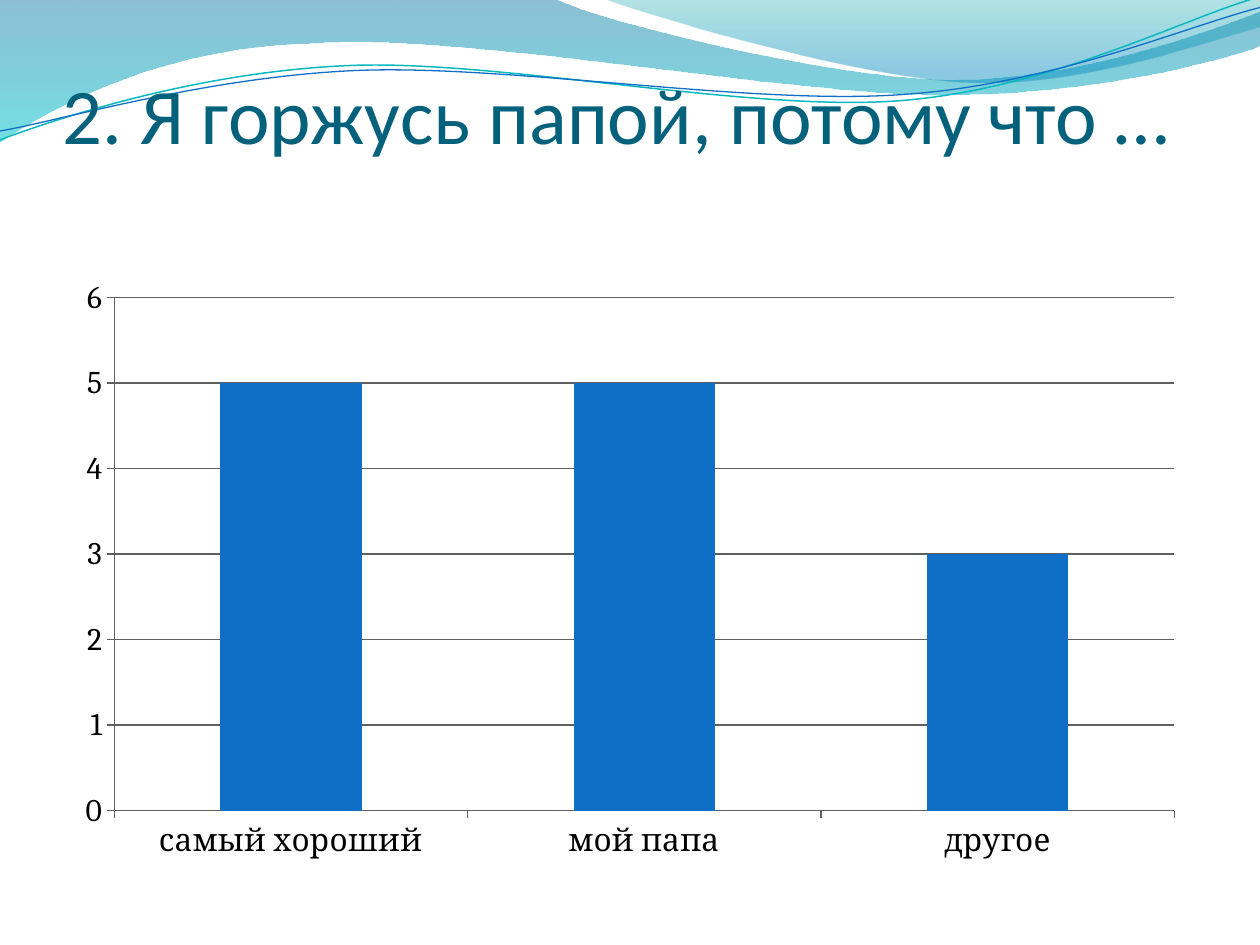
from dataclasses import dataclass
from math import cos, radians, sin
from typing import Optional

from lxml.etree import SubElement
from pptx import Presentation
from pptx.chart.data import CategoryChartData
from pptx.dml.color import RGBColor
from pptx.enum.chart import XL_CHART_TYPE as ChartType, XL_TICK_MARK as TickMark
from pptx.enum.text import MSO_ANCHOR as Anchor
from pptx.oxml.ns import qn
from pptx.util import Inches, Pt

COLORS = {
    "title": "04617B",
    "bar": "0F6FC6",
    "grid": "5F5F5F",
    "text": "000000",
    "deep_blue": "0074A1",
    "cyan": "00C6CF",
    "teal": "00A1A9",
    "sky": "008BBF",
    "teal_line": "0AB8BF",
    "blue_line": "0F6FC6",
}
LINE_TILT = -2.7


@dataclass
class GradientStop:
    position: float
    color: str
    opacity: int


@dataclass
class Wave:
    start: tuple
    segments: list
    gradient: Optional[list] = None
    line_color: str = ""
    line_width: float = 0
    tilt: float = 0
    pivot: tuple = (0, 0)


WAVES = [
    Wave(
        (0, 0),
        [
            (4.4, -0.01),
            (4.76, 0.17, 6.64, 0.63, 7.58, 0.63),
            (8.53, 0.63, 9.58, 0.26, 10, 0.09),
            (10.01, 0.36),
            (9.83, 0.44, 8.7, 0.76, 7.46, 0.75),
            (6.22, 0.75, 3.82, 0.28, 2.57, 0.34),
            (1.29, 0.36, 0.46, 0.83, -0.01, 1.13),
        ],
        gradient=[GradientStop(0, "deep_blue", 45), GradientStop(1, "cyan", 55)],
    ),
    Wave(
        (4.79, -0.01),
        [
            (5.09, 0.11, 6.82, 0.62, 7.69, 0.65),
            (8.56, 0.69, 9.61, 0.32, 10, 0.21),
            (10, 0),
        ],
        gradient=[GradientStop(0, "teal", 30), GradientStop(0.8, "sky", 45)],
    ),
    Wave(
        (0, 1.11),
        [
            (0.48, 0.93, 1.58, 0.57, 2.77, 0.52),
            (3.95, 0.47, 5.93, 0.89, 7.13, 0.8),
            (8.33, 0.71, 9.38, 0.15, 9.98, -0.02),
        ],
        line_color="teal_line",
        line_width=0.85,
        tilt=LINE_TILT,
        pivot=(4.99, 0.57),
    ),
    Wave(
        (0, 1.04),
        [
            (0.47, 0.96, 1.64, 0.61, 2.83, 0.56),
            (4.03, 0.51, 5.97, 0.84, 7.17, 0.75),
            (8.36, 0.67, 9.41, 0.21, 10, 0.06),
        ],
        line_color="blue_line",
        line_width=0.75,
        tilt=LINE_TILT,
        pivot=(5, 0.59),
    ),
]


def rgb(name: str) -> RGBColor:
    return RGBColor.from_string(COLORS[name])


def level_point(wave: Wave, x: float, y: float) -> tuple:
    angle = radians(-wave.tilt)
    across, down = x - wave.pivot[0], y - wave.pivot[1]
    return (
        Inches(wave.pivot[0] + across * cos(angle) - down * sin(angle)),
        Inches(wave.pivot[1] + across * sin(angle) + down * cos(angle)),
    )


def bend_segments(ribbon, segments: list) -> None:
    outline = next(ribbon._element.iter(qn("a:path")))
    corners = iter(outline.findall(qn("a:lnTo")))
    for segment in segments:
        first = next(corners)
        if len(segment) == 2:
            continue
        curve = outline.makeelement(qn("a:cubicBezTo"))
        first.addprevious(curve)
        for corner in (first, next(corners), next(corners)):
            curve.append(corner[0])
            outline.remove(corner)


def draw_wave(slide, wave: Wave) -> None:
    points = [wave.start]
    for segment in wave.segments:
        points += zip(segment[::2], segment[1::2])
    outline = [level_point(wave, x, y) for x, y in points]
    builder = slide.shapes.build_freeform(*outline[0])
    builder.add_line_segments(outline[1:], close=wave.gradient is not None)
    ribbon = builder.convert_to_shape()
    bend_segments(ribbon, wave.segments)
    ribbon.rotation = wave.tilt
    ribbon.shadow.inherit = False
    if wave.gradient is None:
        ribbon.fill.background()
        ribbon.line.color.rgb = rgb(wave.line_color)
        ribbon.line.width = Pt(wave.line_width)
        return
    ribbon.line.fill.background()
    ribbon.fill.gradient()
    ribbon.fill.gradient_angle = 270
    for stop, wanted in zip(ribbon.fill.gradient_stops, wave.gradient):
        stop.position = wanted.position
        stop.color.rgb = rgb(wanted.color)
    color_nodes = ribbon._element.spPr.iter(qn("a:srgbClr"))
    for color_node, wanted in zip(color_nodes, wave.gradient):
        SubElement(color_node, qn("a:alpha"), val=str(wanted.opacity * 1000))


def draw_title(slide, text: str) -> None:
    title = slide.shapes.add_textbox(Inches(0.5), Inches(0.77), Inches(9), Inches(1.25))
    frame = title.text_frame
    frame.word_wrap = True
    frame.vertical_anchor = Anchor.BOTTOM
    frame.margin_left = frame.margin_right = frame.margin_bottom = 0
    frame.margin_top = Inches(0.05)
    frame.text = text
    paragraph = frame.paragraphs[0]
    for font in [paragraph.font] + [run.font for run in paragraph.runs]:
        font.name = "Calibri"
        font.size = Pt(45)
        font.color.rgb = rgb("title")


def draw_answers(slide, answers: dict) -> None:
    data = CategoryChartData()
    data.categories = list(answers)
    data.add_series("Series 1", list(answers.values()))
    chart = slide.shapes.add_chart(
        ChartType.COLUMN_CLUSTERED, Inches(0.5), Inches(2.12), Inches(9), Inches(4.8), data
    ).chart
    chart.has_title = False
    chart.has_legend = False
    chart.font.name = "Cambria"
    chart.font.size = Pt(18)
    chart.font.color.rgb = rgb("text")

    columns = chart.plots[0]
    columns.gap_width = 150
    columns.vary_by_categories = False
    bars = columns.series[0].format.fill
    bars.solid()
    bars.fore_color.rgb = rgb("bar")

    chart.value_axis.has_major_gridlines = True
    for axis in (chart.category_axis, chart.value_axis):
        axis.major_tick_mark = TickMark.OUTSIDE
    for ruled in (chart.category_axis, chart.value_axis, chart.value_axis.major_gridlines):
        ruled.format.line.color.rgb = rgb("grid")
        ruled.format.line.width = Pt(0.75)


def main() -> None:
    deck = Presentation()
    deck.slide_width, deck.slide_height = Inches(10), Inches(7.5)
    slide = deck.slides.add_slide(deck.slide_layouts[6])
    for wave in WAVES:
        draw_wave(slide, wave)
    draw_title(slide, "2. Я горжусь папой, потому что …\v")
    draw_answers(slide, {"самый хороший": 5, "мой папа": 5, "другое": 3})
    deck.save("out.pptx")


if __name__ == "__main__":
    main()
